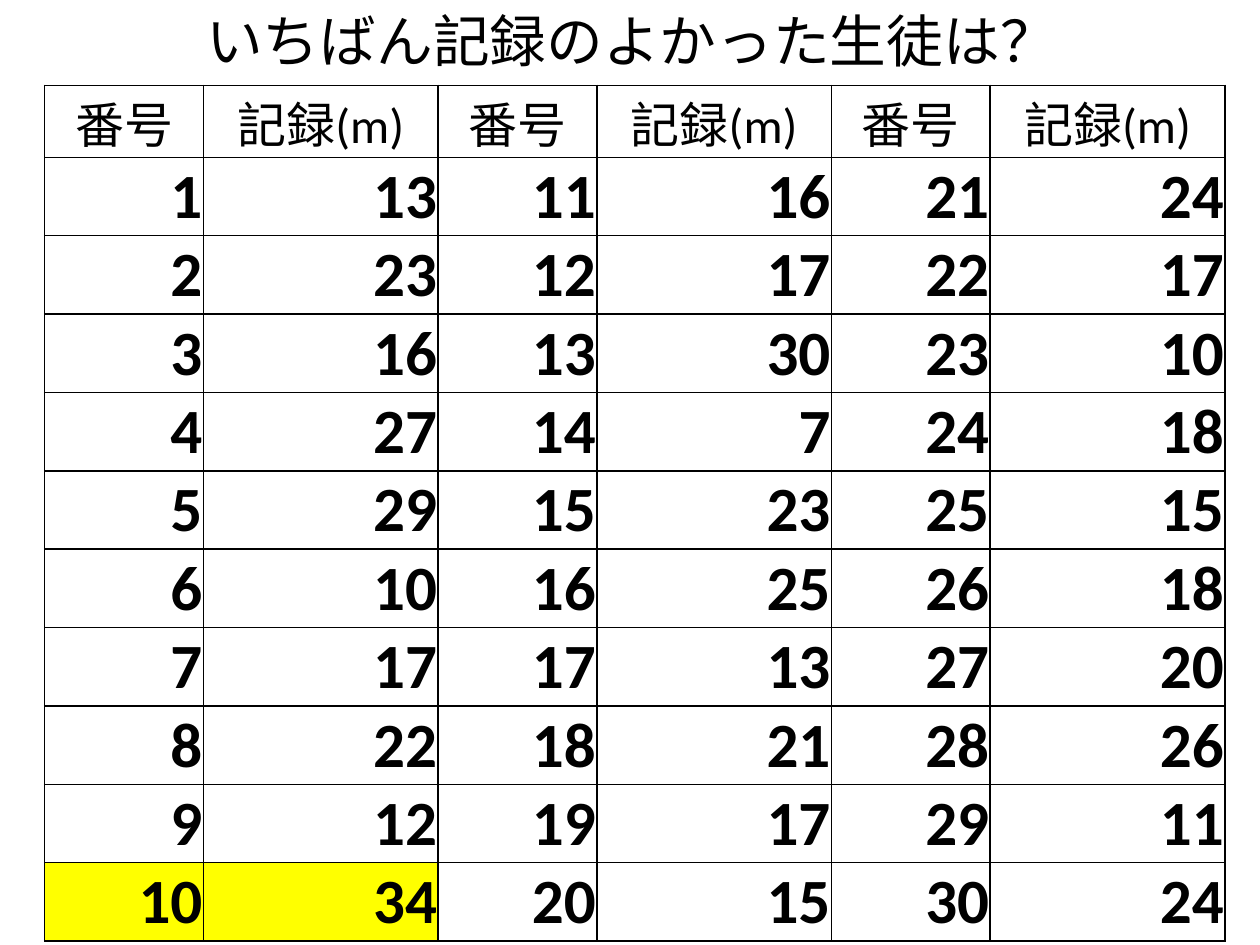
from lxml import etree
from pptx import Presentation
from pptx.dml.color import RGBColor
from pptx.enum.text import MSO_ANCHOR, PP_ALIGN
from pptx.oxml.ns import qn
from pptx.util import Cm, Pt

MIDDLE = MSO_ANCHOR.MIDDLE
CENTER = PP_ALIGN.CENTER
RIGHT = PP_ALIGN.RIGHT

TITLE = "いちばん記録のよかった生徒は？"
HEADINGS = ["番号", "記録(m)"]
GROUP_SIZE = 10
RECORDS = [
    13, 23, 16, 27, 29, 10, 17, 22, 12, 34,
    16, 17, 30, 7, 23, 25, 13, 21, 17, 15,
    24, 17, 10, 18, 15, 18, 20, 26, 11, 24,
]


def color(value):
    return RGBColor.from_string(value)


def apply(target, values):
    for name, value in values.items():
        setattr(target, name, value)


class SlideBuilder:
    font = "Calibri"
    ink = "000000"
    highlight = "FFFF00"
    line_width = Pt(1)
    heading = {"size": Pt(28), "bold": False}
    number = {"size": Pt(36), "bold": True}
    cell_format = {
        "vertical_anchor": MIDDLE,
        "margin_left": Cm(0.02),
        "margin_right": Cm(0.02),
        "margin_top": Cm(0.02),
        "margin_bottom": Cm(0),
    }
    title_format = {
        "word_wrap": True,
        "vertical_anchor": MIDDLE,
        "margin_top": Cm(0),
        "margin_bottom": Cm(0),
    }

    def __init__(self, slide):
        self.slide = slide

    def add_text(self, frame, text, alignment, style):
        para = frame.paragraphs[0]
        para.alignment = alignment
        span = para.add_run()
        span.text = text
        apply(span.font, {"name": self.font, **style})
        span.font.color.rgb = color(self.ink)

    def title(self, text, left, top, width, height):
        box = self.slide.shapes.add_textbox(Cm(left), Cm(top), Cm(width), Cm(height))
        apply(box.text_frame, self.title_format)
        self.add_text(box.text_frame, text, CENTER, {"size": Pt(32.4)})

    def borders(self, cell):
        properties = cell._tc.get_or_add_tcPr()
        for side in ("a:lnL", "a:lnR", "a:lnT", "a:lnB"):
            line = etree.SubElement(properties, qn(side), w=str(self.line_width))
            fill = etree.SubElement(line, qn("a:solidFill"))
            etree.SubElement(fill, qn("a:srgbClr"), val=self.ink)

    def cell(self, cell, text, alignment, style, highlighted):
        apply(cell, self.cell_format)
        self.add_text(cell.text_frame, text, alignment, style)
        self.borders(cell)
        if highlighted:
            cell.fill.solid()
            cell.fill.fore_color.rgb = color(self.highlight)
        else:
            cell.fill.background()

    def table(self, rows, left, top, widths, heights, best):
        frame = self.slide.shapes.add_table(
            len(rows), len(widths), Cm(left), Cm(top), Cm(sum(widths)), Cm(sum(heights))
        )
        table = frame.table
        apply(table, {"first_row": False, "horz_banding": False})
        for column, width in zip(table.columns, widths):
            column.width = Cm(width)
        for row, height in zip(table.rows, heights):
            row.height = Cm(height)
        for row_index, values in enumerate(rows):
            alignment, style = (RIGHT, self.number) if row_index else (CENTER, self.heading)
            for column_index, value in enumerate(values):
                highlighted = (row_index, column_index // len(HEADINGS)) == best
                self.cell(table.cell(row_index, column_index), str(value),
                          alignment, style, highlighted)


def main():
    deck = Presentation()
    deck.slide_width, deck.slide_height = Cm(25.4), Cm(19.05)
    builder = SlideBuilder(deck.slides.add_slide(deck.slide_layouts[6]))
    builder.title(TITLE, 1.3, 0, 22.86, 1.6)

    groups = len(RECORDS) // GROUP_SIZE
    rows = [HEADINGS * groups]
    for offset in range(GROUP_SIZE):
        students = range(offset, len(RECORDS), GROUP_SIZE)
        rows.append([value for index in students for value in (index + 1, RECORDS[index])])

    group, offset = divmod(RECORDS.index(max(RECORDS)), GROUP_SIZE)
    builder.table(rows, 0.9, 1.72, [3.2, 4.73] * groups,
                  [1.45] + [1.58] * GROUP_SIZE, (offset + 1, group))
    deck.save("out.pptx")


if __name__ == "__main__":
    main()
